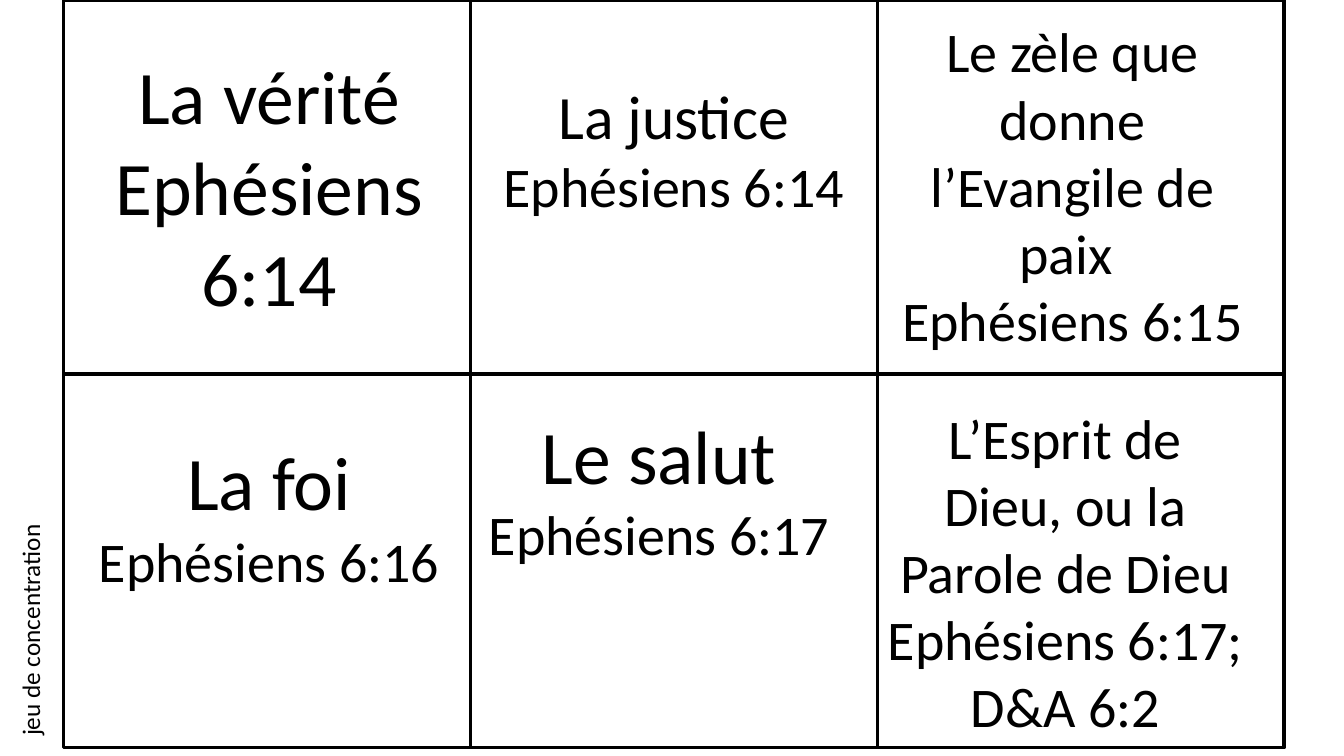
from pptx import Presentation
from pptx.dml.color import RGBColor
from pptx.enum.shapes import MSO_SHAPE
from pptx.enum.text import MSO_ANCHOR, PP_ALIGN
from pptx.util import Pt

RECTANGLE = MSO_SHAPE.RECTANGLE
TOP = MSO_ANCHOR.TOP
CENTER, LEFT = PP_ALIGN.CENTER, PP_ALIGN.LEFT
BLACK = RGBColor(0, 0, 0)
WHITE = RGBColor(255, 255, 255)
FONT = "Calibri"

# Content: text box (left, top, width, height), then paragraphs of (text, size) runs
CARD_TEXTS = [
    ((57.6, 31.7, 269.3, 203.8), [[("La vérité Ephésiens 6:14", 54)]]),
    ((331.2, 51.8, 300.2, 108.7), [[("La justice ", 44), ("Ephésiens 6:14", 40)]]),
    ((631.4, 8.6, 269.3, 249.8), [[("Le zèle que donne l’Evangile de paix ", 40)],
                                  [("Ephésiens 6:15", 40)]]),
    ((57.6, 307.4, 269.3, 121), [[("La foi ", 54), ("Ephésiens 6:16", 40)]]),
    ((336.2, 288.7, 269.3, 121), [[("Le salut ", 54), ("Ephésiens 6:17", 40)]]),
    ((626.4, 284.4, 269.3, 249.8),
     [[("L’Esprit de Dieu, ou la Parole de Dieu Ephésiens 6:17; D&A 6:2", 40)]]),
]
CAPTION = [[("jeu de concentration", 18)]]

# Card grid
COLUMNS, ROWS = 3, 2
GRID_LEFT, GRID_TOP = 45.4, 0
CARD_WIDTH, CARD_HEIGHT = 290.6, 267.1

# Side caption, centred on this point before turning
CAPTION_X, CAPTION_Y = 21.6, 265.7
CAPTION_LENGTH, CAPTION_HEIGHT = 534.2, 29


def add_card(slide, column, row):
    card = slide.shapes.add_shape(
        RECTANGLE, Pt(GRID_LEFT + column * CARD_WIDTH),
        Pt(GRID_TOP + row * CARD_HEIGHT), Pt(CARD_WIDTH), Pt(CARD_HEIGHT))
    card.shadow.inherit = False
    card.fill.solid()
    card.fill.fore_color.rgb = WHITE
    card.line.color.rgb = BLACK
    card.line.width = Pt(2.25)


def add_text(slide, box, paragraphs, alignment):
    shape = slide.shapes.add_textbox(*map(Pt, box))
    frame = shape.text_frame
    frame.word_wrap = True
    frame.vertical_anchor = TOP
    for index, runs in enumerate(paragraphs):
        paragraph = frame.add_paragraph() if index else frame.paragraphs[0]
        paragraph.alignment = alignment
        paragraph.font.name = FONT
        paragraph.font.color.rgb = BLACK
        for text, size in runs:
            run = paragraph.add_run()
            run.text = text
            run.font.size = Pt(size)
    return shape


def main():
    presentation = Presentation()
    presentation.slide_width, presentation.slide_height = Pt(960), Pt(540)
    slide = presentation.slides.add_slide(presentation.slide_layouts[6])

    # Cards
    for column in range(COLUMNS):
        for row in range(ROWS):
            add_card(slide, column, row)

    # Card texts
    for box, paragraphs in CARD_TEXTS:
        add_text(slide, box, paragraphs, CENTER)

    # Side caption, reading upwards
    caption_box = (CAPTION_X - CAPTION_LENGTH / 2, CAPTION_Y - CAPTION_HEIGHT / 2,
                   CAPTION_LENGTH, CAPTION_HEIGHT)
    caption = add_text(slide, caption_box, CAPTION, LEFT)
    caption.rotation = 270

    presentation.save("out.pptx")


if __name__ == "__main__":
    main()
